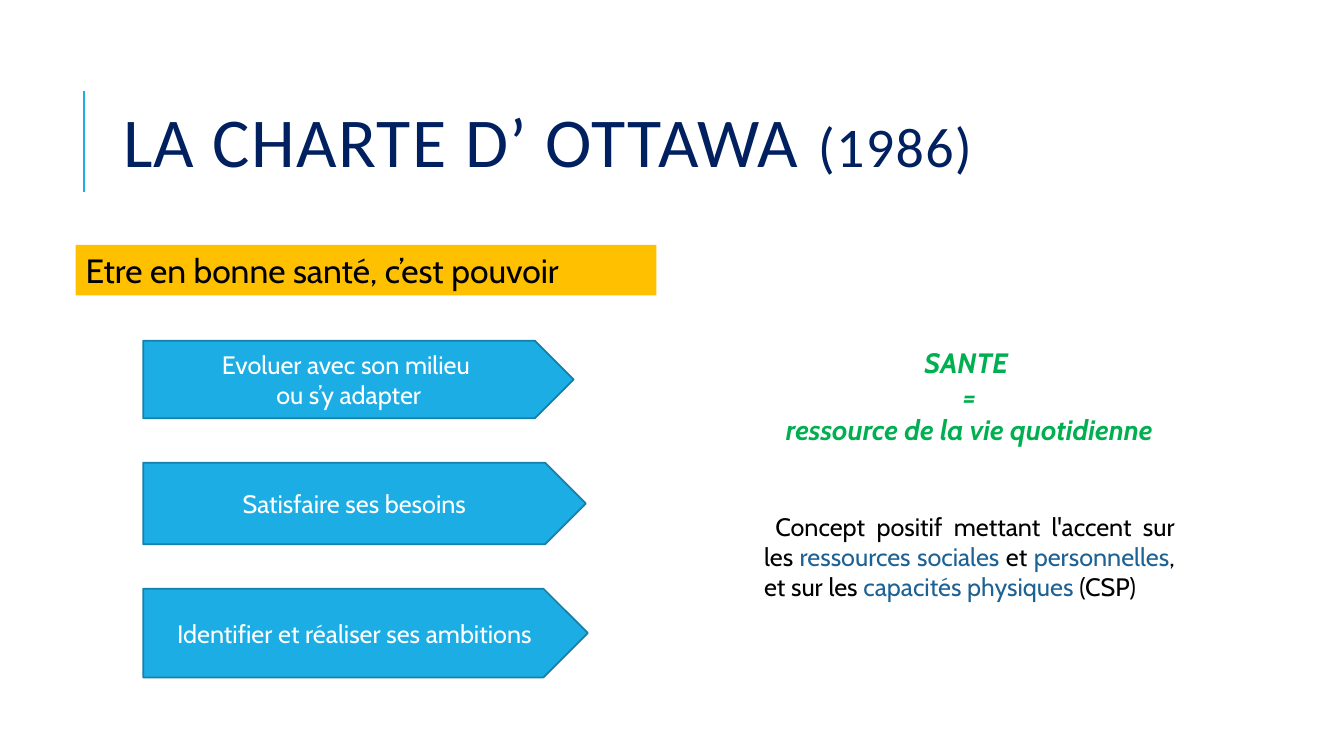
from dataclasses import dataclass
from typing import Optional

from lxml import etree
from pptx import Presentation
from pptx.dml.color import RGBColor
from pptx.enum.shapes import MSO_CONNECTOR, MSO_SHAPE
from pptx.enum.text import MSO_ANCHOR, MSO_AUTO_SIZE, PP_ALIGN
from pptx.oxml.ns import qn
from pptx.util import Inches, Pt

LEFT, CENTER, JUSTIFY = PP_ALIGN.LEFT, PP_ALIGN.CENTER, PP_ALIGN.JUSTIFY
TOP, MIDDLE = MSO_ANCHOR.TOP, MSO_ANCHOR.MIDDLE
NO_FIT = MSO_AUTO_SIZE.NONE
RECT, PENTAGON = MSO_SHAPE.RECTANGLE, MSO_SHAPE.PENTAGON
STRAIGHT = MSO_CONNECTOR.STRAIGHT

NAVY, BLUE, DARK_BLUE, LINK_BLUE = "002060", "1CADE4", "1580A9", "1D6294"
AMBER, GREEN, BLACK, WHITE = "FFC000", "00B050", "000000", "FFFFFF"
BODY_FONT, TITLE_FONT = "Cabin", "Calibri"


@dataclass
class Run:
    text: str
    size: float
    color: str
    font: str = BODY_FONT
    strong: bool = False
    spacing: Optional[int] = None


@dataclass
class Para:
    runs: list[Run]
    align: PP_ALIGN = LEFT
    before: float = 0
    line: float = 1.0


@dataclass
class Block:
    x: float
    y: float
    w: float
    h: float
    paras: list[Para]
    kind: MSO_SHAPE = PENTAGON
    fill: str = BLUE
    line: Optional[str] = DARK_BLUE
    anchor: MSO_ANCHOR = MIDDLE


def rgb(value: str) -> RGBColor:
    return RGBColor.from_string(value)


def write(tf, paras: list[Para], anchor: MSO_ANCHOR) -> None:
    tf.word_wrap = True
    tf.auto_size = NO_FIT
    tf.vertical_anchor = anchor
    for i, para in enumerate(paras):
        p = tf.add_paragraph() if i else tf.paragraphs[0]
        p.alignment = para.align
        p.space_before = Pt(para.before)
        p.line_spacing = para.line
        for run in para.runs:
            r = p.add_run()
            r.text = run.text
            r.font.size = Pt(run.size)
            r.font.name = run.font
            r.font.bold = r.font.italic = run.strong
            r.font.color.rgb = rgb(run.color)
            if run.spacing:
                r._r.get_or_add_rPr().set("spc", str(run.spacing))


def add_block(s, b: Block) -> None:
    sp = s.shapes.add_shape(b.kind, Inches(b.x), Inches(b.y), Inches(b.w), Inches(b.h))
    sp.shadow.inherit = False
    sp.fill.solid()
    sp.fill.fore_color.rgb = rgb(b.fill)
    if b.line:
        sp.line.color.rgb = rgb(b.line)
        sp.line.width = Pt(1.25)
    else:
        sp.line.fill.background()
    write(sp.text_frame, b.paras, b.anchor)


def add_title(s) -> None:
    bar = s.shapes.add_connector(STRAIGHT, Inches(0.83), Inches(1.9), Inches(0.83), Inches(0.9))
    bar.line.color.rgb = rgb(BLUE)
    bar.line.width = Pt(1.5)
    etree.SubElement(bar._element.spPr, qn("a:effectLst"))

    title = s.shapes.title
    title.left, title.top = Inches(1.12), Inches(0.64)
    title.width, title.height = Inches(10.63), Inches(1.64)
    runs = [
        Run("LA CHARTE D’ OTTAWA ", 50, NAVY, TITLE_FONT, spacing=100),
        Run("(1986)", 40, NAVY, TITLE_FONT, spacing=100),
    ]
    write(title.text_frame, [Para(runs, line=0.8)], MIDDLE)


def add_definition(s) -> None:
    tb = s.shapes.add_textbox(Inches(7.48), Inches(3.38), Inches(4.27), Inches(3.6))
    headline = ["SANTE ", "=", " ressource de la vie quotidienne "]
    paras = [Para([Run(text, 20, GREEN, strong=True)], CENTER) for text in headline]
    concept = [
        (" Concept positif mettant l'accent sur les ", BLACK),
        ("ressources sociales ", LINK_BLUE),
        ("et ", BLACK),
        ("personnelles", LINK_BLUE),
        (", et sur les ", BLACK),
        ("capacités physiques ", LINK_BLUE),
        ("(CSP)", BLACK),
    ]
    paras.append(Para([Run(text, 18, color) for text, color in concept], JUSTIFY, before=46))
    write(tb.text_frame, paras, TOP)


def arrow(y: float, w: float, h: float, lines: list[str]) -> Block:
    return Block(1.42, y, w, h, [Para([Run(text, 18, WHITE)], CENTER) for text in lines])


def main() -> None:
    prs = Presentation()
    prs.slide_width, prs.slide_height = Inches(13.33), Inches(7.5)
    s = prs.slides.add_slide(prs.slide_layouts[5])
    add_title(s)
    heading = [Para([Run("Etre en bonne santé, c’est pouvoir", 24, BLACK)])]
    blocks = [
        Block(0.75, 2.43, 5.76, 0.5, heading, RECT, AMBER, None, TOP),
        arrow(3.38, 4.27, 0.77, ["Evoluer avec son milieu ", "ou s’y adapter"]),
        arrow(4.59, 4.39, 0.81, ["Satisfaire ses besoins"]),
        arrow(5.84, 4.41, 0.88, ["Identifier et réaliser ses ambitions"]),
    ]
    for block in blocks:
        add_block(s, block)
    add_definition(s)
    prs.save("out.pptx")


if __name__ == "__main__":
    main()
